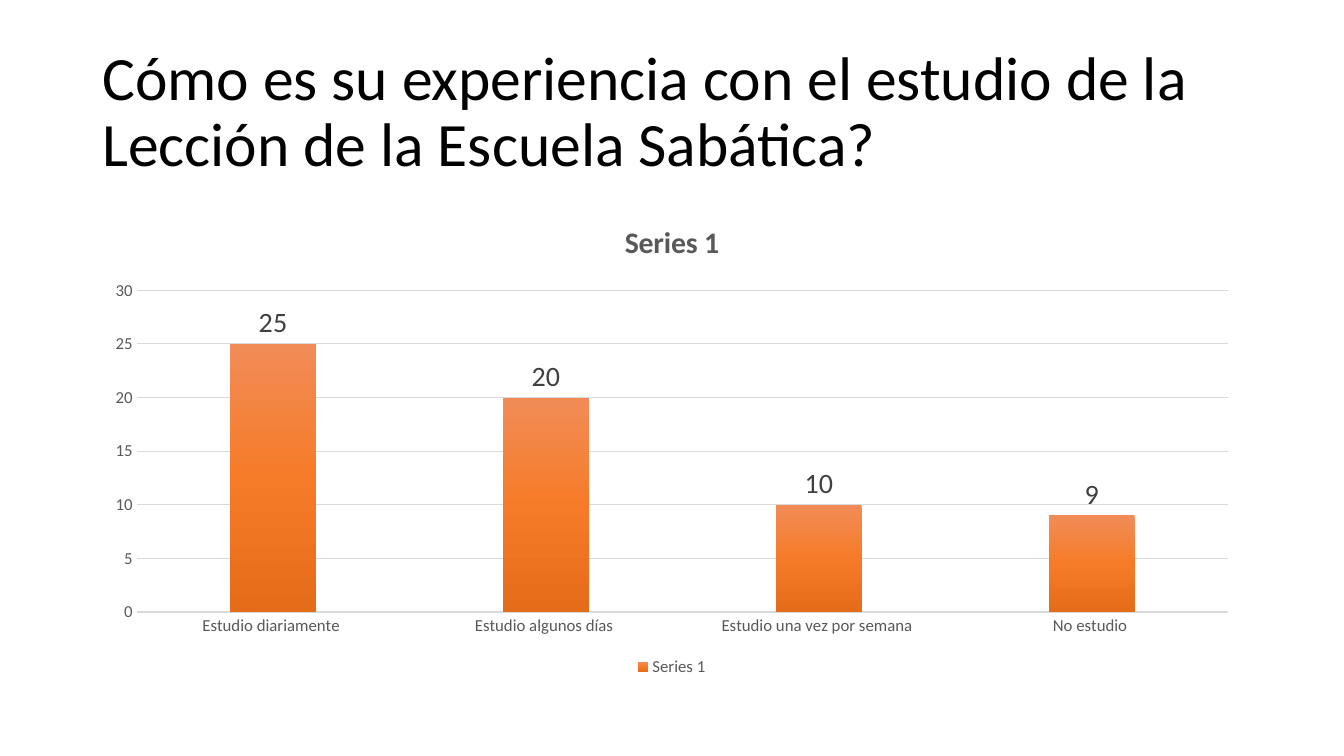
from pptx import Presentation
from pptx import util as u
from pptx.chart.data import CategoryChartData
from pptx.dml.color import RGBColor
from pptx.enum import chart as ch, text
from pptx.oxml import parse_xml
from pptx.oxml.ns import nsdecls

COLOURS = {
    "title": "000000",
    "label": "595959",
    "value": "404040",
    "grid": "D9D9D9",
    "bar_top": "F18C57",
    "bar_middle": "F67B28",
    "bar_bottom": "E56C19",
}
FONT = "Calibri"
ANSWERS = {
    "Estudio diariamente ": 25,
    "Estudio algunos días ": 20,
    "Estudio una vez por semana ": 10,
    "No estudio ": 9,
}


def set_font(font, size, colour, bold=False):
    """Apply the deck's typeface with a size, colour and weight."""
    font.name = FONT
    font.size = u.Pt(size)
    font.bold = bold
    font.color.rgb = RGBColor.from_string(COLOURS[colour])


def set_line(line, width):
    """Draw a line in the grid colour."""
    line.color.rgb = RGBColor.from_string(COLOURS["grid"])
    line.width = u.Pt(width)


def fill_bars(series):
    """Fill the bars with a vertical gradient of three colours."""
    names = ("bar_top", "bar_middle", "bar_bottom")
    stops = "".join(
        f'<a:gs pos="{i * 50000}"><a:srgbClr val="{COLOURS[name]}"/></a:gs>'
        for i, name in enumerate(names)
    )
    gradient = parse_xml(
        f'<a:gradFill {nsdecls("a")} rotWithShape="1"><a:gsLst>{stops}</a:gsLst>'
        '<a:lin ang="5400000" scaled="0"/></a:gradFill>'
    )
    series.format.line.fill.background()
    series._element.get_or_add_spPr().insert(0, gradient)


def add_title(page, left, top, width, height):
    """Place the question in the given box."""
    box = page.shapes.add_textbox(u.Pt(left), u.Pt(top), u.Pt(width), u.Pt(height))
    frame = box.text_frame
    frame.word_wrap = True
    frame.vertical_anchor = text.MSO_ANCHOR.MIDDLE
    para = frame.paragraphs[0]
    para.text = "Cómo es su experiencia con el estudio de la Lección de la Escuela Sabática?"
    para.line_spacing = 0.9
    set_font(para.font, 44, "title")


def add_answer_chart(page, left, top, width, height):
    """Place the column chart of answers in the given box."""
    data = CategoryChartData()
    data.categories = ANSWERS.keys()
    data.add_series("Series 1", ANSWERS.values())
    chart = page.shapes.add_chart(
        ch.XL_CHART_TYPE.COLUMN_CLUSTERED,
        u.Pt(left), u.Pt(top), u.Pt(width), u.Pt(height), data,
    ).chart
    set_font(chart.font, 10, "title")

    chart.has_title = True
    para = chart.chart_title.text_frame.paragraphs[0]
    para.text = "Series 1"
    set_font(para.font, 21.3, "label", bold=True)
    chart.chart_title.include_in_layout = False

    chart.has_legend = True
    chart.legend.position = ch.XL_LEGEND_POSITION.BOTTOM
    chart.legend.include_in_layout = False
    set_font(chart.legend.font, 12, "label")

    for axis in (chart.category_axis, chart.value_axis):
        axis.major_tick_mark = axis.minor_tick_mark = ch.XL_TICK_MARK.NONE
        set_font(axis.tick_labels.font, 12, "label")
    set_line(chart.category_axis.format.line, 1)
    chart.value_axis.format.line.fill.background()
    chart.value_axis.has_major_gridlines = True
    set_line(chart.value_axis.major_gridlines.format.line, 0.75)

    plot = chart.plots[0]
    plot.gap_width = 219
    plot.vary_by_categories = False
    fill_bars(plot.series[0])
    plot.has_data_labels = True
    labels = plot.data_labels
    labels.show_value = True
    labels.position = ch.XL_LABEL_POSITION.OUTSIDE_END
    set_font(labels.font, 20, "value")


def main():
    """Build the slide and save the deck."""
    deck = Presentation()
    deck.slide_width, deck.slide_height = u.Pt(960), u.Pt(540)
    page = deck.slides.add_slide(deck.slide_layouts[6])
    margin = 66
    width = 960 - 2 * margin
    add_title(page, margin, 28.75, width, 104.4)
    add_answer_chart(page, margin, 143.75, width, 342.6)
    deck.save("out.pptx")


if __name__ == "__main__":
    main()
